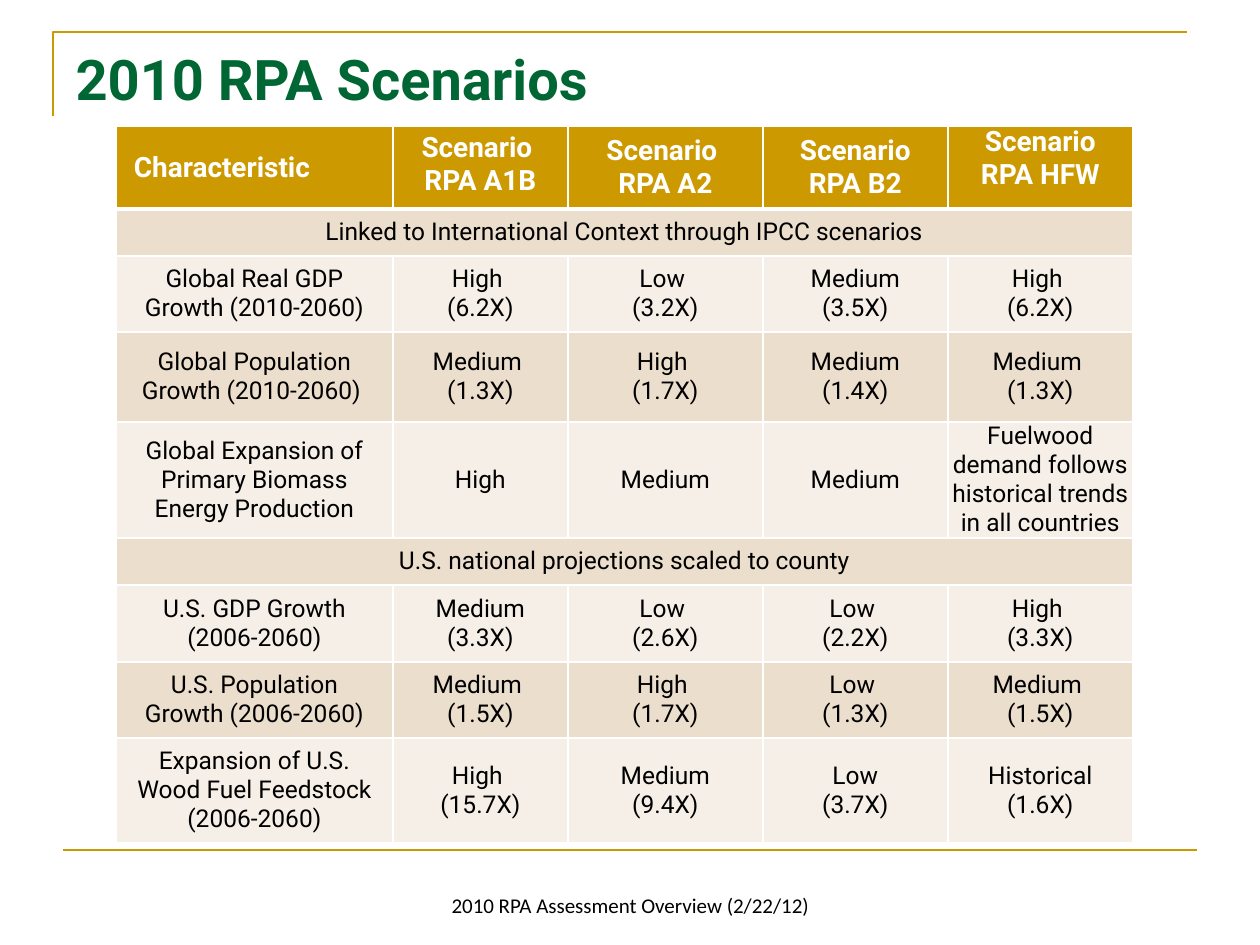
from dataclasses import dataclass

from lxml.etree import SubElement
from pptx import Presentation
from pptx.dml.color import RGBColor
from pptx.enum.text import MSO_ANCHOR as Anchor, MSO_AUTO_SIZE as AutoSize, PP_ALIGN as Align
from pptx.oxml import parse_xml
from pptx.oxml.ns import nsdecls, qn
from pptx.util import Pt


@dataclass(frozen=True)
class Theme:
    gold: str = "CC9900"
    green: str = "006633"
    white: str = "FFFFFF"
    black: str = "000000"
    sand: str = "ECDECC"
    cream: str = "F6EFE7"
    font: str = "Roboto"
    footer_font: str = "Calibri"
    title_size: int = 32
    header_size: int = 16
    body_size: int = 14
    footer_size: int = 12


theme = Theme()
PX = 914400 / 126


def px(*lengths):
    return [round(length * PX) for length in lengths]


def write(frame, text, size, color, font=theme.font, bold=False, align=Align.CENTER):
    frame.word_wrap = True
    for index, line in enumerate(text.split("\n")):
        paragraph = frame.add_paragraph() if index else frame.paragraphs[0]
        paragraph.alignment = align
        run = paragraph.add_run()
        run.text = line
        run.font.name = font
        run.font.size = Pt(size)
        run.font.bold = bold
        run.font.color.rgb = RGBColor.from_string(color)


presentation = Presentation()
presentation.slide_width, presentation.slide_height = px(1260, 945)
slide = presentation.slides.add_slide(presentation.slide_layouts[5])

builder = slide.shapes.build_freeform(53, 116, scale=PX)
builder.add_line_segments([(53, 32), (1187, 32)], close=False)
corner = builder.convert_to_shape()
corner.shadow.inherit = False
corner.fill.background()

rule = slide.shapes.add_connector(1, *px(63, 850, 1197, 850))
SubElement(rule._element.spPr, qn("a:effectLst"))
for shape in (corner, rule):
    shape.line.color.rgb = RGBColor.from_string(theme.gold)
    shape.line.width = Pt(1.5)

title = slide.shapes.title
title.left, title.top, title.width, title.height = px(63, 38, 1134, 130)
title.text_frame.auto_size = AutoSize.NONE
title.text_frame.vertical_anchor = Anchor.TOP
write(title.text_frame, "2010 RPA Scenarios", theme.title_size, theme.green, bold=True, align=Align.LEFT)

rows = [
    ["Characteristic", "Scenario \nRPA A1B", "Scenario \nRPA A2", "Scenario\nRPA B2", "Scenario\nRPA HFW"],
    ["Linked to International Context through IPCC scenarios"],
    ["Global Real GDP Growth (2010-2060)", "High \n(6.2X)", "Low \n(3.2X)", "Medium (3.5X)", "High \n(6.2X)"],
    ["Global Population Growth (2010-2060) ", "Medium \n(1.3X)", "High \n(1.7X)", "Medium (1.4X)", "Medium \n(1.3X)"],
    ["Global Expansion of Primary Biomass Energy Production", "High", "Medium", "Medium",
     "Fuelwood demand follows historical trends in all countries"],
    ["U.S. national projections scaled to county"],
    ["U.S. GDP Growth (2006-2060)", "Medium\n(3.3X)", "Low \n(2.6X)", "Low \n(2.2X)", "High \n(3.3X)"],
    ["U.S. Population Growth (2006-2060)", "Medium \n(1.5X)", "High \n(1.7X)", "Low \n(1.3X)", "Medium \n(1.5X)"],
    ["Expansion of U.S. Wood Fuel Feedstock (2006-2060)", "High \n(15.7X)", "Medium\n(9.4X)", "Low\n(3.7X)",
     "Historical\n(1.6X)"],
]
column_widths = [277, 175, 195, 185, 185]
row_heights = [82, 45, 75, 90, 115, 46, 77, 75, 103]
table = slide.shapes.add_table(
    len(rows), len(column_widths), *px(116, 126, sum(column_widths), sum(row_heights))
).table
table.horz_banding = False
for column, width in zip(table.columns, px(*column_widths)):
    column.width = width

for row_index, (texts, height) in enumerate(zip(rows, px(*row_heights))):
    table.rows[row_index].height = height
    header = row_index == 0
    fill = theme.gold if header else theme.sand if row_index % 2 else theme.cream
    if len(texts) == 1:
        table.cell(row_index, 0).merge(table.cell(row_index, len(column_widths) - 1))
    for column_index in range(len(column_widths)):
        cell = table.cell(row_index, column_index)
        cell.fill.solid()
        cell.fill.fore_color.rgb = RGBColor.from_string(fill)
        inset_x, inset_y = (0, 0) if column_index == 4 else (13, 6) if header and column_index == 1 else (18, 9)
        cell.margin_left = cell.margin_right = px(inset_x)[0]
        cell.margin_top = cell.margin_bottom = px(inset_y)[0]
        cell.vertical_anchor = Anchor.TOP if header and column_index else Anchor.MIDDLE
        for position, side in enumerate("LRTB"):
            width = Pt(3 if header and side == "B" else 1)
            border = parse_xml(
                f'<a:ln{side} {nsdecls("a")} w="{width}"><a:solidFill>'
                f'<a:srgbClr val="{theme.white}"/></a:solidFill></a:ln{side}>'
            )
            cell._tc.tcPr.insert(position, border)
        if column_index < len(texts):
            write(
                cell.text_frame,
                texts[column_index],
                theme.header_size if header else theme.body_size,
                theme.white if header else theme.black,
                bold=header,
                align=Align.LEFT if header and column_index == 0 else Align.CENTER,
            )

footer = slide.shapes.add_textbox(*px(431, 861, 399, 63))
footer.text_frame.vertical_anchor = Anchor.BOTTOM
write(footer.text_frame, "2010 RPA Assessment Overview (2/22/12)", theme.footer_size, theme.black, font=theme.footer_font)

presentation.save("out.pptx")
